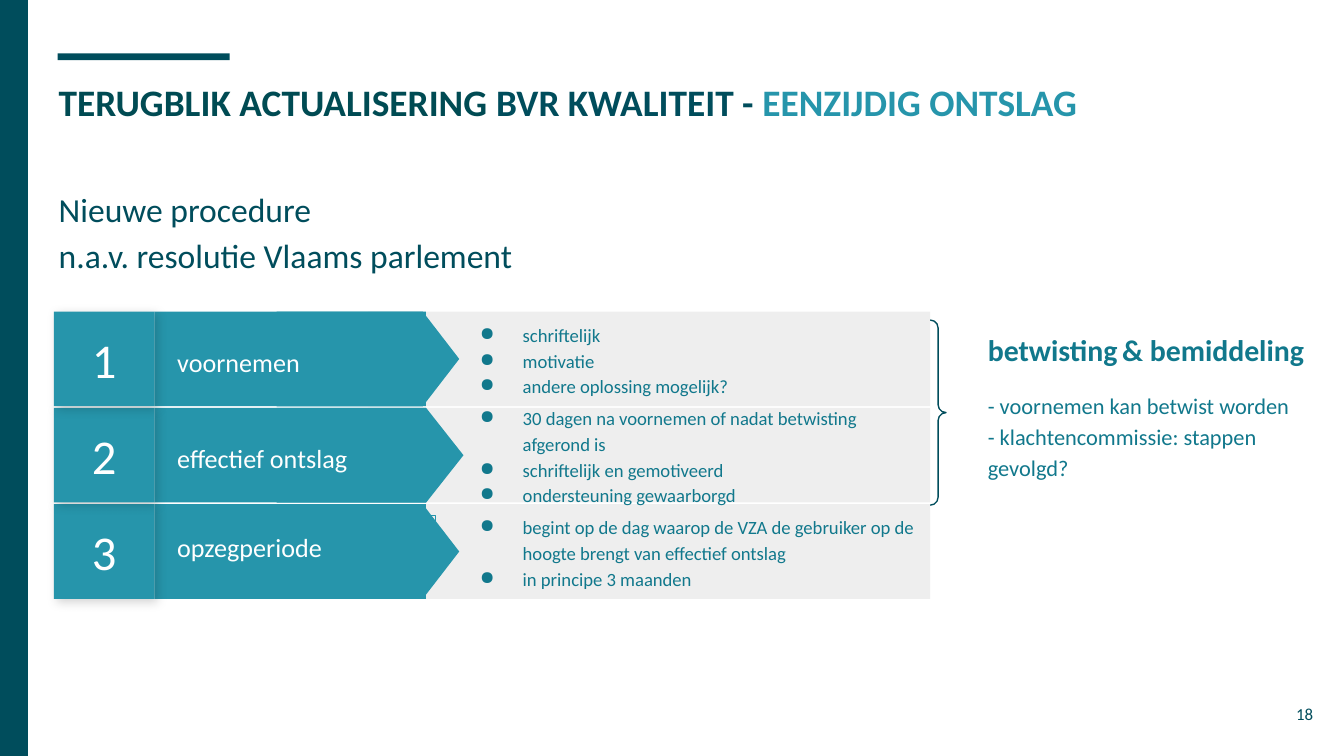
from dataclasses import dataclass

from lxml.etree import SubElement
from pptx import Presentation
from pptx.dml.color import RGBColor
from pptx.enum.shapes import MSO_SHAPE
from pptx.enum.text import MSO_ANCHOR, MSO_AUTO_SIZE, PP_ALIGN
from pptx.oxml.ns import qn
from pptx.util import Cm, Pt


@dataclass(frozen=True)
class Theme:
    font: str = "Calibri"
    dark: str = "004D5C"
    title_dark: str = "004B53"
    teal: str = "2695AB"
    text: str = "11788C"
    panel: str = "EEEEEE"
    white: str = "FFFFFF"
    title_size: float = 20
    intro_size: float = 18
    heading_size: float = 16
    label_size: float = 14
    number_size: float = 26
    note_size: float = 12
    bullet_size: float = 10
    page_size: float = 9


@dataclass(frozen=True)
class Step:
    label: str
    points: list
    label_width: float
    label_height: float = 1.37
    arrow_length: float = 3.45
    points_width: float = 8.26
    outlined: bool = False


class SlideBuilder:
    def __init__(self, slide, theme):
        self.slide = slide
        self.theme = theme

    def style_run(self, run, size, color, bold=False):
        run.font.name = self.theme.font
        run.font.size = Pt(size)
        run.font.bold = bold
        run.font.color.rgb = RGBColor.from_string(color)

    def place(self, shape, left, top, width, height):
        shape.left, shape.top = Cm(left), Cm(top)
        shape.width, shape.height = Cm(width), Cm(height)

    def fill_text(self, shape, lines, size, color, bold=False, align=PP_ALIGN.LEFT,
                  anchor=MSO_ANCHOR.MIDDLE, spacing=1.15, margin=0, bullets=False):
        frame = shape.text_frame
        frame.text = "\n".join(lines)
        frame.word_wrap = True
        frame.auto_size = MSO_AUTO_SIZE.NONE
        frame.vertical_anchor = anchor
        frame.margin_left = frame.margin_right = Cm(0.25)
        frame.margin_top = frame.margin_bottom = Cm(0.25)
        for paragraph in frame.paragraphs:
            paragraph.alignment = align
            paragraph.line_spacing = spacing
            paragraph.space_before = Pt(0)
            properties = paragraph._p.get_or_add_pPr()
            properties.set("marL", str(Cm(margin)))
            properties.set("indent", str(Cm(-0.81) if bullets else 0))
            if bullets:
                bullet_color = SubElement(properties, qn("a:buClr"))
                SubElement(bullet_color, qn("a:srgbClr"), val=color)
                SubElement(properties, qn("a:buChar"), char="●")
            else:
                SubElement(properties, qn("a:buNone"))
            for run in paragraph.runs:
                self.style_run(run, size, color, bold)

    def title(self, parts, left, top, width, height):
        title = self.slide.shapes.title
        self.place(title, left, top, width, height)
        self.fill_text(title, [""], self.theme.title_size, self.theme.dark,
                       anchor=MSO_ANCHOR.TOP, spacing=1.0)
        for words, color in parts:
            run = title.text_frame.paragraphs[0].add_run()
            run.text = words
            self.style_run(run, self.theme.title_size, color, bold=True)

    def body(self, lines, left, top, width, height):
        body = self.slide.placeholders[1]
        self.place(body, left, top, width, height)
        self.fill_text(body, lines, self.theme.intro_size, self.theme.dark,
                       anchor=MSO_ANCHOR.TOP)

    def text(self, lines, left, top, width, height, size, color, **style):
        box = self.slide.shapes.add_textbox(Cm(left), Cm(top), Cm(width), Cm(height))
        self.fill_text(box, lines, size, color, **style)

    def shape(self, kind, left, top, width, height, fill=None, line=None):
        shape = self.slide.shapes.add_shape(
            kind, Cm(left), Cm(top), Cm(width), Cm(height))
        shape.shadow.inherit = False
        if fill:
            shape.fill.solid()
            shape.fill.fore_color.rgb = RGBColor.from_string(fill)
        else:
            shape.fill.background()
        if line:
            shape.line.color.rgb = RGBColor.from_string(line)
            shape.line.width = Pt(0.75)
        else:
            shape.line.fill.background()
        return shape

    def box(self, *place, fill=None, line=None):
        return self.shape(MSO_SHAPE.RECTANGLE, *place, fill=fill, line=line)

    def arrow(self, left, top, length, height, fill):
        # The pentagon points down until it is turned to the right
        shift = (length - height) / 2
        arrow = self.shape(MSO_SHAPE.FLOWCHART_OFFPAGE_CONNECTOR,
                           left + shift, top - shift, height, length, fill)
        arrow.rotation = 270

    def brace(self, left, top, width, height, line):
        brace = self.shape(MSO_SHAPE.RIGHT_BRACE, left, top, width, height, line=line)
        brace.adjustments[0] = 0.5

    def soft_shadow(self, shape):
        effects = shape._element.spPr.find(qn("a:effectLst"))
        shadow = SubElement(effects, qn("a:outerShdw"), blurRad=str(Pt(5.6)),
                            dist=str(Pt(2.2)), dir="2700000", algn="tl",
                            rotWithShape="0")
        color = SubElement(shadow, qn("a:srgbClr"), val="000000")
        SubElement(color, qn("a:alpha"), val="17000")

    def step(self, number, step, top, height):
        theme = self.theme
        self.box(6.96, top, 10.62, height, fill=theme.panel)
        self.box(2.92, top, 5.13, height, fill=theme.teal)
        self.arrow(5.23, top, step.arrow_length, height, theme.teal)

        label = self.box(3.1, top + 0.22, step.label_width, step.label_height,
                         fill=None if step.outlined else theme.teal,
                         line=theme.teal if step.outlined else None)
        self.fill_text(label, [step.label], theme.label_size, theme.white)

        tile = self.box(1.02, top, 1.9, height, fill=theme.teal)
        self.soft_shadow(tile)
        self.fill_text(tile, [str(number)], theme.number_size, theme.white,
                       align=PP_ALIGN.CENTER, spacing=1.0)

        self.text(step.points, 8.36, top, step.points_width, height,
                  theme.bullet_size, theme.text, margin=1.27, bullets=True)


STEPS = [
    Step("voornemen",
         ["schriftelijk", "motivatie", "andere oplossing mogelijk?"], 3.94),
    Step("effectief ontslag",
         ["30 dagen na voornemen of nadat betwisting afgerond is",
          "schriftelijk en gemotiveerd", "ondersteuning gewaarborgd"],
         4.95, arrow_length=3.53),
    Step("opzegperiode",
         ["begint op de dag waarop de VZA de gebruiker op de hoogte brengt "
          "van effectief ontslag", "in principe 3 maanden"],
         5.13, label_height=1.09, points_width=9.22, outlined=True),
]
FIRST_TOP, ROW_PITCH, ROW_HEIGHT = 5.89, 1.82, 1.79


def main():
    deck = Presentation()
    deck.slide_width, deck.slide_height = Cm(25.4), Cm(14.29)
    theme = Theme()
    page = SlideBuilder(deck.slides.add_slide(deck.slide_layouts[1]), theme)

    # Side band and accent bar
    page.box(1.09, 1.01, 3.25, 0.13, fill=theme.dark)
    page.box(0, 0, 0.53, 14.29, fill=theme.dark)

    # Title and introduction
    page.title([("TERUGBLIK ACTUALISERING ", theme.title_dark),
                ("BVR KWALITEIT - ", theme.dark),
                ("EENZIJDIG ONTSLAG", theme.teal)], 0.86, 1.24, 23.67, 1.6)
    page.body(["Nieuwe procedure", "n.a.v. resolutie Vlaams parlement"],
              0.86, 3.2, 11.1, 2.31)

    # Dispute and mediation, beside the first two steps
    page.text(["betwisting\t& bemiddeling"], 18.42, 5.87, 6.65, 1.37,
              theme.heading_size, theme.text, bold=True)
    page.text(["- voornemen kan betwist worden",
               "- klachtencommissie: stappen gevolgd?"], 17.15, 7.09, 8.25, 2.03,
              theme.note_size, theme.text, anchor=MSO_ANCHOR.TOP, margin=1.27)
    page.brace(17.58, 6.05, 0.3, 3.5, theme.dark)

    # Steps, the last one at the back
    for index, step in reversed(list(enumerate(STEPS))):
        page.step(index + 1, step, FIRST_TOP + index * ROW_PITCH, ROW_HEIGHT)

    # Page number
    page.text(["18"], 23.55, 12.95, 1.52, 1.09, theme.page_size, theme.dark,
              align=PP_ALIGN.RIGHT, spacing=1.0)

    deck.save("out.pptx")


if __name__ == "__main__":
    main()
